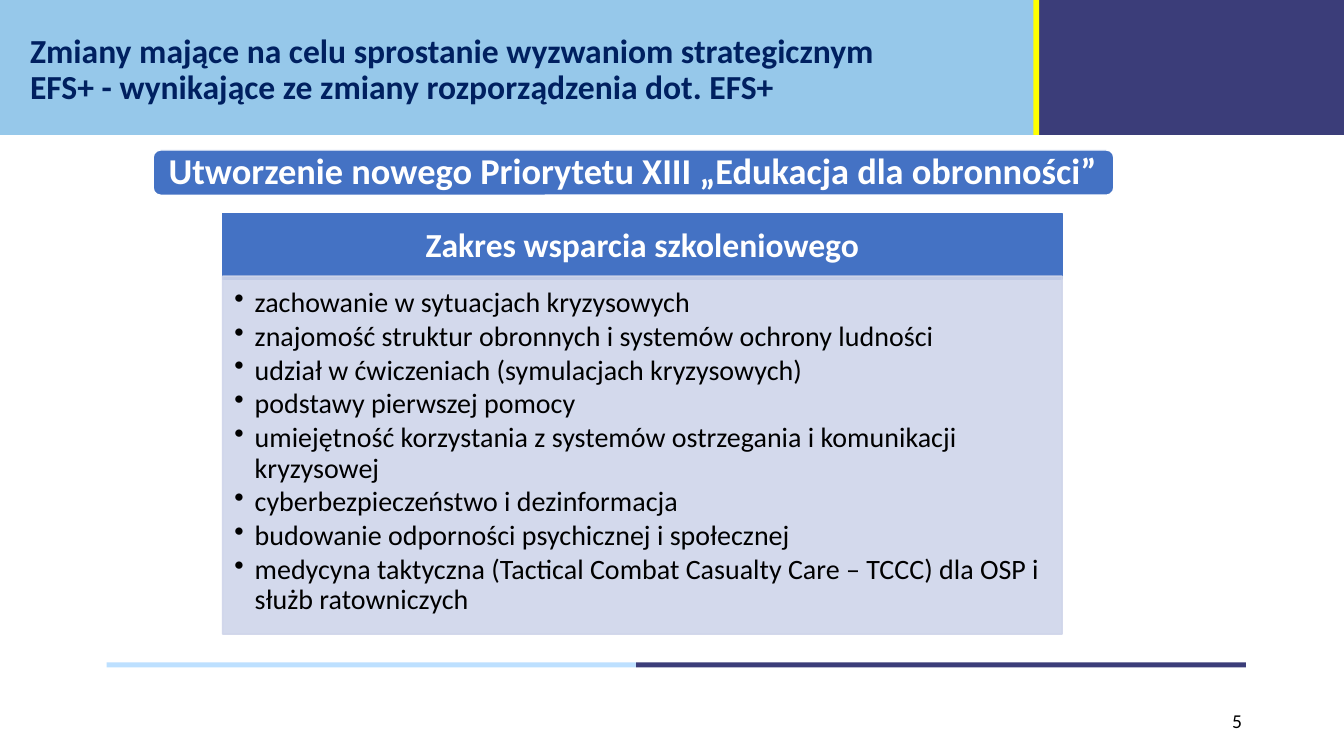
from dataclasses import dataclass

import lxml.etree
import pptx
import pptx.dml.color
import pptx.enum.shapes
import pptx.enum.text
import pptx.oxml.ns
import pptx.util

Cm = pptx.util.Cm
Pt = pptx.util.Pt
SHAPE = pptx.enum.shapes.MSO_SHAPE
ALIGN = pptx.enum.text.PP_ALIGN
ANCHOR = pptx.enum.text.MSO_ANCHOR
qn = pptx.oxml.ns.qn

COLORS = {
    "sky": "96C8EA",
    "pale": "BDE0FF",
    "indigo": "3B3D79",
    "yellow": "FFFF00",
    "blue": "4472C4",
    "lavender": "CFD5EA",
    "navy": "002060",
    "white": "FFFFFF",
    "black": "000000",
}


@dataclass
class Box:
    left: float
    top: float
    width: float
    height: float
    fill: str = ""
    line: str = ""
    kind: SHAPE = SHAPE.RECTANGLE
    opacity: int = 100


HEADER_H = 3.4
RULE_Y, RULE_H = 16.69, 0.13
PANEL_X, PANEL_W = 5.61, 21.16

BARS = [
    Box(0, 0, 26.19, HEADER_H, "sky"),
    Box(26.19, 0, 7.68, HEADER_H, "indigo"),
    Box(2.69, RULE_Y, 13.34, RULE_H, "pale"),
    Box(16.03, RULE_Y, 15.37, RULE_H, "indigo"),
    Box(26.04, 0, 0.15, HEADER_H, "yellow"),
]
TITLE = Box(0.51, 0, 25.5, 3.56)
NUMBER = Box(23.93, 17.65, 7.62, 1.02)
PRIORITY = Box(3.86, 3.78, 24.21, 1.14, "blue", "white", SHAPE.ROUNDED_RECTANGLE)
SCOPE_HEAD = Box(PANEL_X, 5.38, PANEL_W, 1.65, "blue", "blue")
SCOPE_BODY = Box(PANEL_X, 6.96, PANEL_W, 9.02, "lavender", "lavender", opacity=90)

TITLE_LINES = [
    "Zmiany mające na celu sprostanie wyzwaniom strategicznym",
    "EFS+ - wynikające ze zmiany rozporządzenia dot. EFS+",
]
TOPICS = [
    "zachowanie w sytuacjach kryzysowych",
    "znajomość struktur obronnych i systemów ochrony ludności",
    "udział w ćwiczeniach (symulacjach kryzysowych)",
    "podstawy pierwszej pomocy",
    "umiejętność korzystania z systemów ostrzegania i komunikacji kryzysowej",
    "cyberbezpieczeństwo i dezinformacja",
    "budowanie odporności psychicznej i społecznej",
    "medycyna taktyczna (Tactical Combat Casualty Care – TCCC) dla OSP i służb ratowniczych",
]


def rgb(name: str) -> pptx.dml.color.RGBColor:
    return pptx.dml.color.RGBColor.from_string(COLORS[name])


def add_box(slide, box: Box):
    place = [Cm(v) for v in (box.left, box.top, box.width, box.height)]
    if not box.fill:
        return slide.shapes.add_textbox(*place)
    sp = slide.shapes.add_shape(box.kind, *place)
    sp.shadow.inherit = False
    sp.fill.solid()
    sp.fill.fore_color.rgb = rgb(box.fill)
    if box.line:
        sp.line.color.rgb = rgb(box.line)
        sp.line.width = Pt(1)
    else:
        sp.line.fill.background()
    if box.opacity < 100:
        for clr in sp._element.spPr.iter(qn("a:srgbClr")):
            alpha = lxml.etree.SubElement(clr, qn("a:alpha"))
            alpha.set("val", str(box.opacity * 1000))
    return sp


def add_bullet(p) -> None:
    pPr = p._p.get_or_add_pPr()
    pPr.set("marL", str(Cm(0.51)))
    pPr.set("indent", str(-Cm(0.51)))
    bu = lxml.etree.SubElement(pPr, qn("a:buChar"))
    bu.set("char", "•")


def write(sp, lines: list[str], *, size: float, color: str, bold: bool = False,
          align=ALIGN.LEFT, anchor=ANCHOR.MIDDLE, spacing: float = 0.9,
          after: float = 0, bullet: bool = False,
          insets: tuple = (0.25, 0.13, 0.25, 0.13)) -> None:
    tf = sp.text_frame
    tf.word_wrap = True
    tf.vertical_anchor = anchor
    tf.margin_left, tf.margin_top, tf.margin_right, tf.margin_bottom = map(Cm, insets)
    for i, text in enumerate(lines):
        p = tf.add_paragraph() if i else tf.paragraphs[0]
        p.alignment = align
        p.line_spacing = spacing
        p.space_after = Pt(after)
        if bullet:
            add_bullet(p)
        r = p.add_run()
        r.text = text
        r.font.name = "Calibri"
        r.font.size = Pt(size)
        r.font.bold = bold
        r.font.color.rgb = rgb(color)


def main() -> None:
    prs = pptx.Presentation()
    prs.slide_width, prs.slide_height = Cm(33.87), Cm(19.05)
    slide = prs.slides.add_slide(prs.slide_layouts[6])

    for bar in BARS:
        add_box(slide, bar)
    write(add_box(slide, TITLE), TITLE_LINES, size=24, color="navy", bold=True)
    write(add_box(slide, NUMBER), ["5"], size=14, color="black",
          align=ALIGN.RIGHT, spacing=1.0)
    write(add_box(slide, PRIORITY),
          ["Utworzenie nowego Priorytetu XIII „Edukacja dla obronności”"],
          size=26, color="white", bold=True, align=ALIGN.CENTER,
          insets=(0.28, 0, 0.28, 0))
    write(add_box(slide, SCOPE_HEAD), ["Zakres wsparcia szkoleniowego"],
          size=24, color="white", bold=True, align=ALIGN.CENTER,
          insets=(0.48, 0.28, 0.48, 0.28))
    write(add_box(slide, SCOPE_BODY), TOPICS, size=20, color="black",
          anchor=ANCHOR.TOP, after=2.6, bullet=True,
          insets=(0.3, 0.3, 0.41, 0.43))
    prs.save("out.pptx")


if __name__ == "__main__":
    main()
